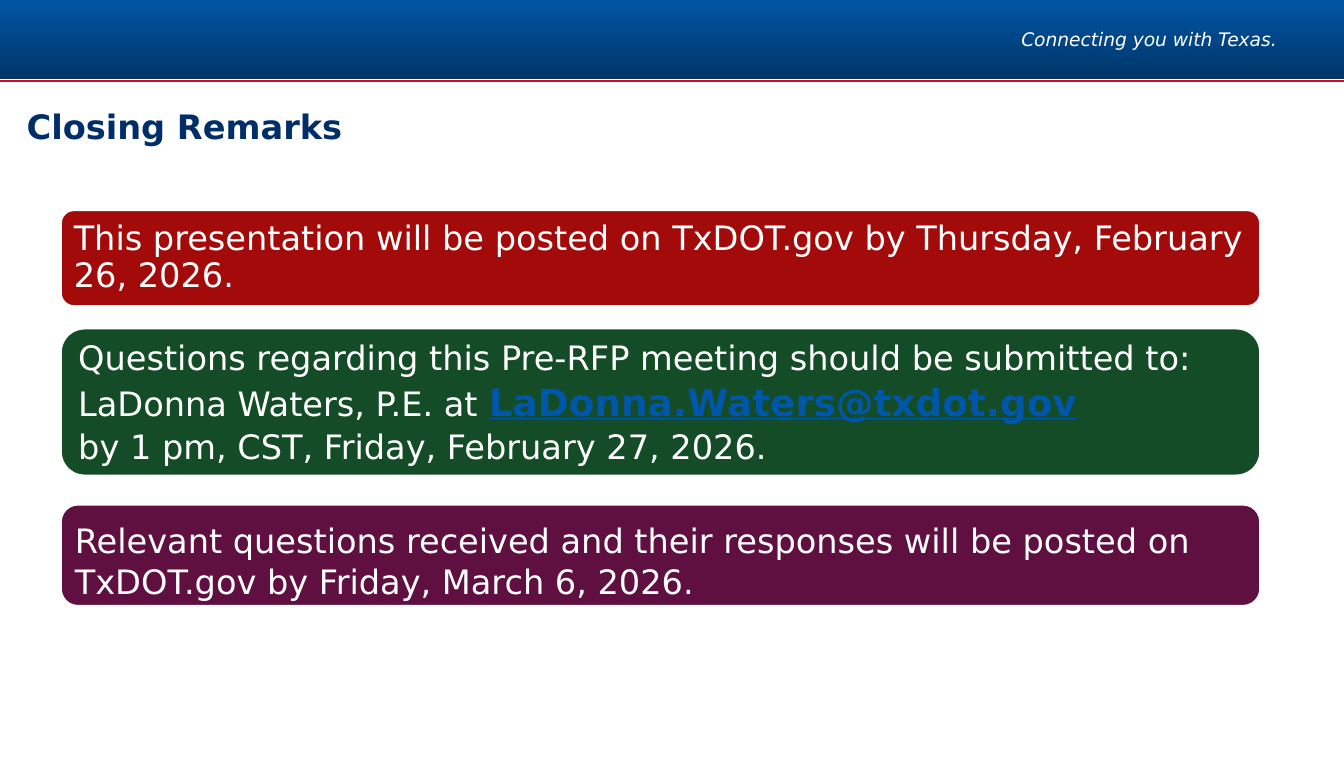
"""Build the closing remarks slide: banner, title and three rounded cards."""
import pptx
import pptx.util
import pptx.dml.color
import pptx.enum.shapes
import pptx.enum.text
import pptx.oxml.ns
import lxml.etree

Inches, Pt = pptx.util.Inches, pptx.util.Pt
SHAPE = pptx.enum.shapes.MSO_SHAPE
ALIGN = pptx.enum.text.PP_ALIGN
ANCHOR = pptx.enum.text.MSO_ANCHOR

BODY = {"size": 18, "color": "FFFFFF"}
EMAIL = {"size": 20, "color": "0056A9", "bold": True, "underline": True}
TAGLINE = {"size": 10, "color": "FFFFFF", "italic": True}
TITLE = {"size": 18, "color": "002E69", "bold": True}

CARD_LEFT, CARD_WIDTH = 0.45, 8.93
CARDS = [
    {"top": 1.56, "height": 0.72, "radius": 0.1, "fill": "A30A0A",
     "margins": (0.07, 0.07, 0.07, 0.07), "format": {"line_spacing": 0.9},
     "lines": [[("This presentation will be posted on TxDOT.gov by Thursday, "
                 "February 26, 2026.", BODY)]]},
    {"top": 2.44, "height": 1.1, "radius": 0.18, "fill": "134C26",
     "margins": (0.08, 0, 0.08, 0), "format": {"space_after": Pt(1)},
     "lines": [[("Questions regarding this Pre-RFP meeting should be submitted to:", BODY)],
               [("LaDonna Waters, P.E. at ", BODY), ("LaDonna.Waters@txdot.gov", EMAIL)],
               [("by 1 pm, CST, Friday, February 27, 2026.", BODY)]]},
    {"top": 3.75, "height": 0.76, "radius": 0.13, "fill": "5F0F40",
     "margins": (0.07, 0.1, 0.07, 0.02), "format": {},
     "lines": [[("Relevant questions received and their responses will be posted on "
                 "TxDOT.gov by Friday, March 6, 2026.", BODY)]]},
]


def rgb(value):
    return pptx.dml.color.RGBColor.from_string(value)


def write(sp, lines, margins, anchor, wrap=True, **paragraph_format):
    tf = sp.text_frame
    tf.word_wrap = wrap
    tf.vertical_anchor = anchor
    for side, margin in zip(("left", "top", "right", "bottom"), margins):
        setattr(tf, f"margin_{side}", Inches(margin))
    for i, runs in enumerate(lines):
        p = tf.add_paragraph() if i else tf.paragraphs[0]
        for name, value in {"alignment": ALIGN.LEFT, **paragraph_format}.items():
            setattr(p, name, value)
        for text, style in runs:
            r = p.add_run()
            r.text = text
            font = {"name": "DejaVu Sans", **style}
            r.font.color.rgb = rgb(font.pop("color"))
            font["size"] = Pt(font["size"])
            for name, value in font.items():
                setattr(r.font, name, value)


def add_banner(s):
    sp = s.shapes.add_shape(SHAPE.RECTANGLE, *map(Inches, (-0.01, -0.03, 10.02, 0.62)))
    sp.shadow.inherit = False
    sp.line.fill.background()
    sp.fill.gradient()
    sp.fill.gradient_angle = 270
    for stop, color in zip(sp.fill.gradient_stops, ("0057A8", "003567")):
        stop.color.rgb = rgb(color)
    rule = s.shapes.add_connector(pptx.enum.shapes.MSO_CONNECTOR.STRAIGHT,
                                  *map(Inches, (-0.01, 0.6, 10.01, 0.6)))
    rule.line.color.rgb = rgb("D90D0D")
    rule.line.width = Pt(1)
    lxml.etree.SubElement(rule._element.spPr, pptx.oxml.ns.qn("a:effectLst"))
    tagline = s.shapes.add_textbox(*map(Inches, (7.17, 0, 2.33, 0.6)))
    write(tagline, [[("Connecting you with Texas.", TAGLINE)]], (0, 0, 0, 0),
          ANCHOR.MIDDLE, wrap=False, alignment=ALIGN.RIGHT, line_spacing=0.9)


def add_card(s, card):
    box = (CARD_LEFT, card["top"], CARD_WIDTH, card["height"])
    sp = s.shapes.add_shape(SHAPE.ROUNDED_RECTANGLE, *map(Inches, box))
    sp.adjustments[0] = card["radius"] / card["height"]
    sp.shadow.inherit = False
    sp.fill.solid()
    sp.fill.fore_color.rgb = rgb(card["fill"])
    sp.line.color.rgb = rgb("FFFFFF")
    sp.line.width = Pt(1.5)
    write(sp, card["lines"], card["margins"], ANCHOR.MIDDLE, **card["format"])


def main():
    prs = pptx.Presentation()
    prs.slide_width, prs.slide_height = Inches(10), Inches(5.63)
    s = prs.slides.add_slide(prs.slide_layouts[6])
    add_banner(s)
    title = s.shapes.add_textbox(*map(Inches, (0.1, 0.74, 5.02, 0.4)))
    write(title, [[("Closing Remarks", TITLE)]], (0.1, 0.05, 0.1, 0.05), ANCHOR.TOP)
    for card in CARDS:
        add_card(s, card)
    prs.save("out.pptx")


if __name__ == "__main__":
    main()
